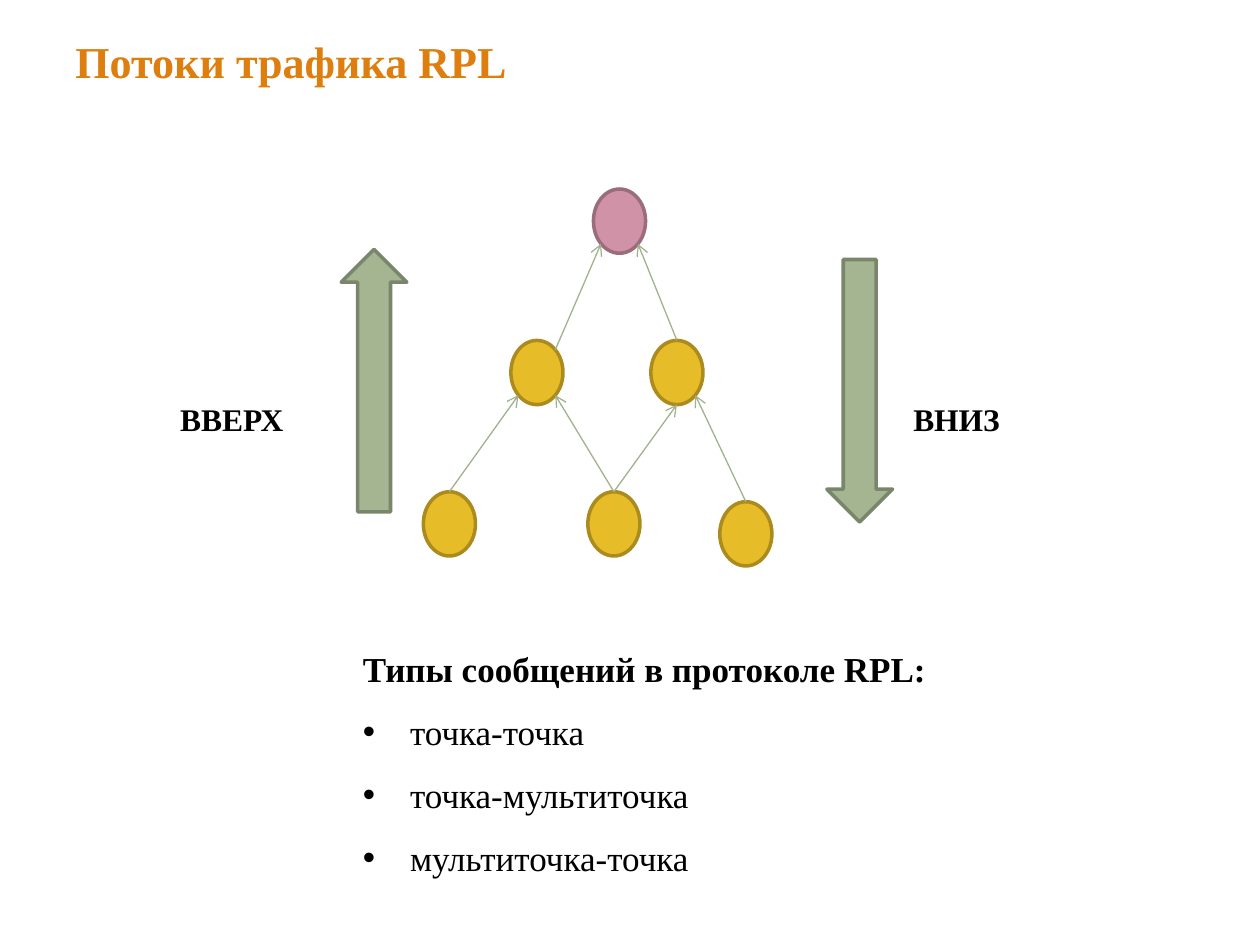
import pptx
import pptx.util
import pptx.dml.color
import pptx.enum.shapes
import pptx.enum.text
import pptx.oxml
import pptx.oxml.ns
import lxml.etree

Pt = pptx.util.Pt
RGB = pptx.dml.color.RGBColor
SHAPE = pptx.enum.shapes.MSO_SHAPE
ANCHOR = pptx.enum.text.MSO_ANCHOR
qn = pptx.oxml.ns.qn

ORANGE = RGB(0xDD, 0x7E, 0x0E)
GOLD = RGB(0xE7, 0xBC, 0x29)
BRONZE = RGB(0xAB, 0x8B, 0x1E)
PINK = RGB(0xD0, 0x92, 0xA7)
PLUM = RGB(0x9A, 0x6C, 0x7C)
SAGE = RGB(0xA5, 0xB5, 0x92)
MOSS = RGB(0x7A, 0x86, 0x6C)
LINK = RGB(0xA1, 0xB2, 0x8E)
BLACK = RGB(0, 0, 0)

FACE = "Times New Roman"
HEAD = {"name": FACE, "size": Pt(25.2), "bold": True}
LABEL = {"name": FACE, "size": Pt(18), "bold": True}
LEAD = {"name": FACE, "size": Pt(20), "bold": True}
ITEM = {"name": FACE, "size": Pt(20), "bold": False}

WIDE, HIGH = 29.8, 36.7
DIAG = 0.5 ** 0.5
SIDES = {
    "top": (0, -1),
    "low": (0, 1),
    "left": (-DIAG, DIAG),
    "right": (DIAG, DIAG),
    "peak": (DIAG, -DIAG),
}
NODES = {
    "root": (112.2, 0),
    "west": (65, 86.5),
    "east": (145, 86.5),
    "leaf one": (15, 173),
    "leaf two": (109, 173),
    "leaf three": (184.4, 178.7),
}
LINKS = [
    ("leaf one", "top", "west", "left"),
    ("leaf two", "top", "west", "right"),
    ("leaf two", "top", "east", "low"),
    ("leaf three", "top", "east", "right"),
    ("west", "peak", "root", "left"),
    ("east", "top", "root", "right"),
]


def add_el(parent, tag, **attrs):
    node = lxml.etree.SubElement(parent, qn(tag))
    for key, value in attrs.items():
        node.set(key, str(value))
    return node


def add_box(slide, box, anchor):
    frame = slide.shapes.add_textbox(*map(Pt, box)).text_frame
    frame.word_wrap = True
    frame.vertical_anchor = anchor
    return frame


def put_text(para, text, style, color):
    run = para.add_run()
    run.text = text
    for key, value in style.items():
        setattr(run.font, key, value)
    run.font.color.rgb = color
    return run


def add_form(slide, kind, box, fill, line):
    form = slide.shapes.add_shape(kind, *map(Pt, box))
    form.shadow.inherit = False
    form.fill.solid()
    form.fill.fore_color.rgb = fill
    form.line.color.rgb = line
    form.line.width = Pt(2)
    return form


def add_title(slide, box):
    frame = add_box(slide, box, ANCHOR.TOP)
    frame.margin_top = Pt(6.5)
    run = put_text(frame.paragraphs[0], "Потоки трафика RPL", HEAD, ORANGE)
    props = run.font.fill._xPr
    glow = lxml.etree.Element(qn("a:effectLst"))
    cast = add_el(glow, "a:outerShdw", blurRad=Pt(3), dist=Pt(3), dir=2700000, algn="tl")
    tint = add_el(cast, "a:srgbClr", val="000000")
    add_el(tint, "a:alpha", val=43000)
    props.find(qn("a:solidFill")).addnext(glow)


def add_link(slide, start, end):
    link = slide.shapes.add_connector(
        pptx.enum.shapes.MSO_CONNECTOR.STRAIGHT, *map(Pt, start + end))
    link.line.color.rgb = LINK
    link.line.width = Pt(0.75)
    add_el(link.line._get_or_add_ln(), "a:tailEnd", type="arrow")
    add_el(link._element.spPr, "a:effectLst")


def add_tree(slide, left, top):
    def spot(name, side):
        x, y = NODES[name]
        dx, dy = SIDES[side]
        return left + x + dx * WIDE / 2, top + y + (1 + dy) * HIGH / 2

    for name, (x, y) in NODES.items():
        fill, line = (PINK, PLUM) if name == "root" else (GOLD, BRONZE)
        box = (left + x - WIDE / 2, top + y, WIDE, HIGH)
        add_form(slide, SHAPE.FLOWCHART_CONNECTOR, box, fill, line)
    for child, out, parent, side in LINKS:
        add_link(slide, spot(child, out), spot(parent, side))


def add_flow(slide, box, angle, text, place):
    form = add_form(slide, SHAPE.DOWN_ARROW, box, SAGE, MOSS)
    form.rotation = angle
    frame = add_box(slide, place, ANCHOR.MIDDLE)
    put_text(frame.paragraphs[0], text, LABEL, BLACK)


def add_list(slide, box, title, items):
    frame = add_box(slide, box, ANCHOR.TOP)
    put_text(frame.paragraphs[0], title, LEAD, BLACK)
    for text in items:
        para = frame.add_paragraph()
        para.line_spacing = 1.5
        props = para._p.get_or_add_pPr()
        props.set("marL", str(Pt(27)))
        props.set("indent", str(Pt(-27)))
        add_el(props, "a:buFont", typeface="Arial")
        add_el(props, "a:buChar", char="•")
        put_text(para, text, ITEM, BLACK)


def main():
    deck = pptx.Presentation()
    deck.slide_width, deck.slide_height = Pt(720), Pt(540)
    slide = deck.slides.add_slide(deck.slide_layouts[6])
    add_title(slide, (36, 13, 666, 70))
    add_tree(slide, 241.8, 108)
    add_flow(slide, (195, 142.5, 37.5, 150), 180, "ВВЕРХ", (95.8, 217.5, 108.7, 44))
    add_flow(slide, (472.5, 148.3, 37.5, 150), 0, "ВНИЗ", (514.8, 217.5, 88.6, 44))
    add_list(slide, (200.2, 366.5, 351.4, 140.4), "Типы сообщений в протоколе RPL:",
             ["точка-точка", "точка-мультиточка", "мультиточка-точка"])
    deck.save("out.pptx")


if __name__ == "__main__":
    main()
